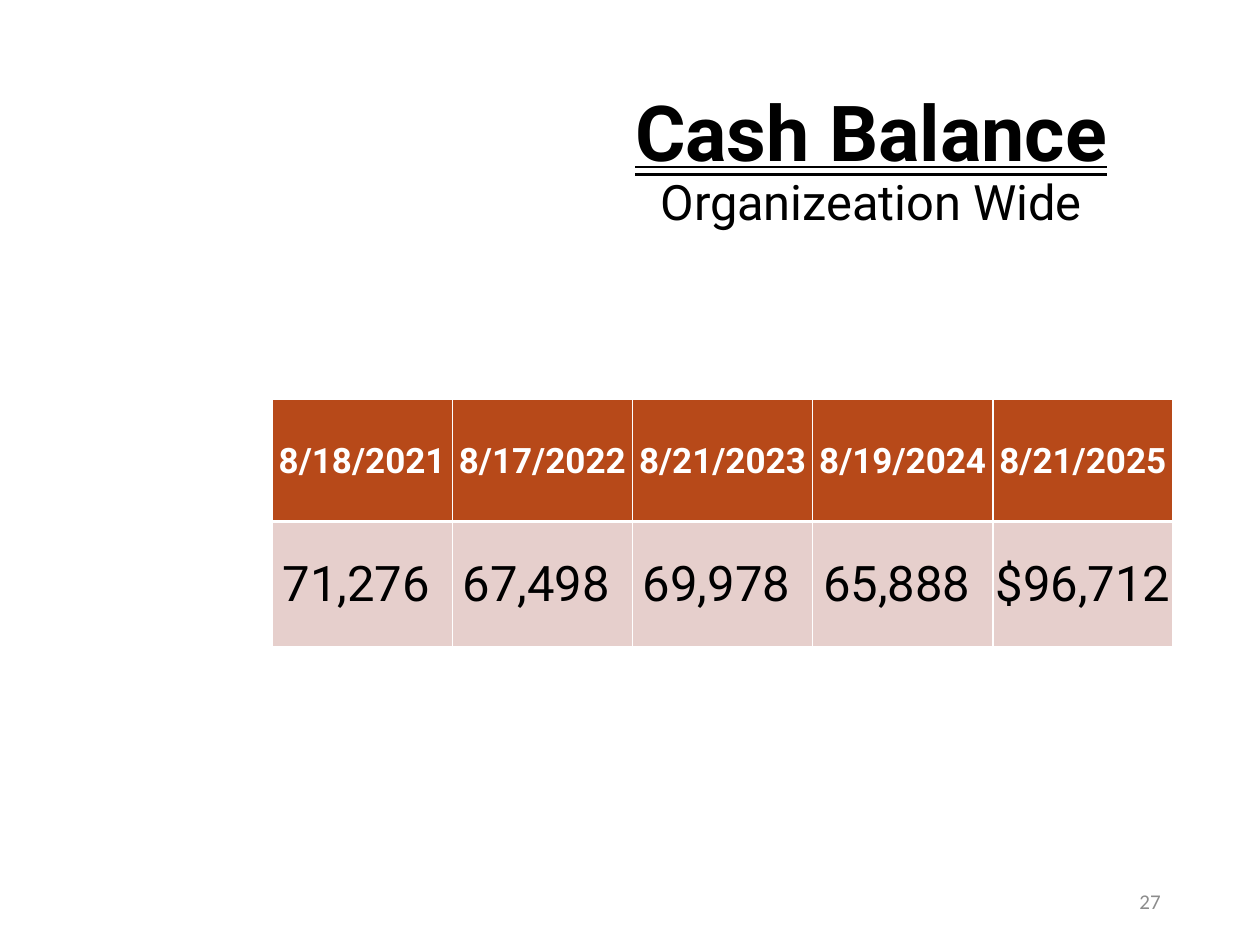
from lxml.etree import SubElement
from pptx import Presentation
from pptx.dml.color import RGBColor
from pptx.enum.text import MSO_ANCHOR as Anchor, MSO_UNDERLINE as Line, PP_ALIGN as Align
from pptx.oxml.ns import qn
from pptx.util import Inches, Pt

DATES = ["8/18/2021", "8/17/2022", "8/21/2023", "8/19/2024", "8/21/2025"]
CASH = ["71,276 ", "67,498 ", "69,978 ", "65,888 ", "$96,712 "]


def color(code):
    return RGBColor.from_string(code)


def style(font, size, code, bold=False, name="Roboto"):
    font.name, font.size, font.bold = name, Pt(size), bold
    font.color.rgb = color(code)


def add_box(slide, left, top, width, height, align):
    """Add a middle-anchored text box and return its first paragraph."""
    frame = slide.shapes.add_textbox(
        Inches(left), Inches(top), Inches(width), Inches(height)).text_frame
    frame.word_wrap = True
    frame.vertical_anchor = Anchor.MIDDLE
    para = frame.paragraphs[0]
    para.alignment = align
    return para


def add_title(slide):
    para = add_box(slide, 3.5, 0.67, 6.83, 1.25, Align.CENTER)
    para.line_spacing = 0.9
    head = para.add_run()
    head.text = "Cash Balance"
    style(head.font, 44.1, "000000", True)
    head.font.underline = Line.DOUBLE_LINE
    para.add_line_break()
    sub = para.add_run()
    sub.text = "Organizeation Wide"
    style(sub.font, 27.9, "000000")


def add_number(slide):
    para = add_box(slide, 7.06, 6.95, 2.25, 0.4, Align.RIGHT)
    para.text = "27"
    style(para.font, 12, "8C8C8C", name="Calibri")


def add_edges(cell, top, bottom):
    """Draw white cell borders; top and bottom are widths in points."""
    props = cell._tc.get_or_add_tcPr()
    for side, width in (("L", 1), ("R", 1), ("T", top), ("B", bottom)):
        edge = SubElement(props, qn(f"a:ln{side}"), w=str(Pt(width)))
        fill = SubElement(edge, qn("a:solidFill"))
        SubElement(fill, qn("a:srgbClr"), val="FFFFFF")


def fill_cell(cell, text, back, size, ink, bold, edges):
    add_edges(cell, *edges)
    cell.fill.solid()
    cell.fill.fore_color.rgb = color(back)
    cell.vertical_anchor = Anchor.MIDDLE
    cell.margin_left = cell.margin_right = cell.margin_top = Inches(0.01)
    cell.margin_bottom = 0
    para = cell.text_frame.paragraphs[0]
    para.text = text
    para.alignment = Align.CENTER
    style(para.font, size, ink, bold)


def add_cash(slide):
    rows = [
        (DATES, 0.97, ("B74919", 20, "FFFFFF", True, (1, 1.5))),
        (CASH, 0.99, ("E6CFCC", 28, "000000", False, (1.5, 1))),
    ]
    table = slide.shapes.add_table(
        len(rows), len(DATES), Inches(2.16), Inches(3.17),
        Inches(7.15), Inches(1.96)).table
    for row, (texts, height, look) in enumerate(rows):
        table.rows[row].height = Inches(height)
        for col, text in enumerate(texts):
            fill_cell(table.cell(row, col), text, *look)


def main():
    deck = Presentation()
    deck.slide_width, deck.slide_height = Inches(10), Inches(7.5)
    slide = deck.slides.add_slide(deck.slide_layouts[6])
    add_number(slide)
    add_title(slide)
    add_cash(slide)
    deck.save("out.pptx")


if __name__ == "__main__":
    main()
